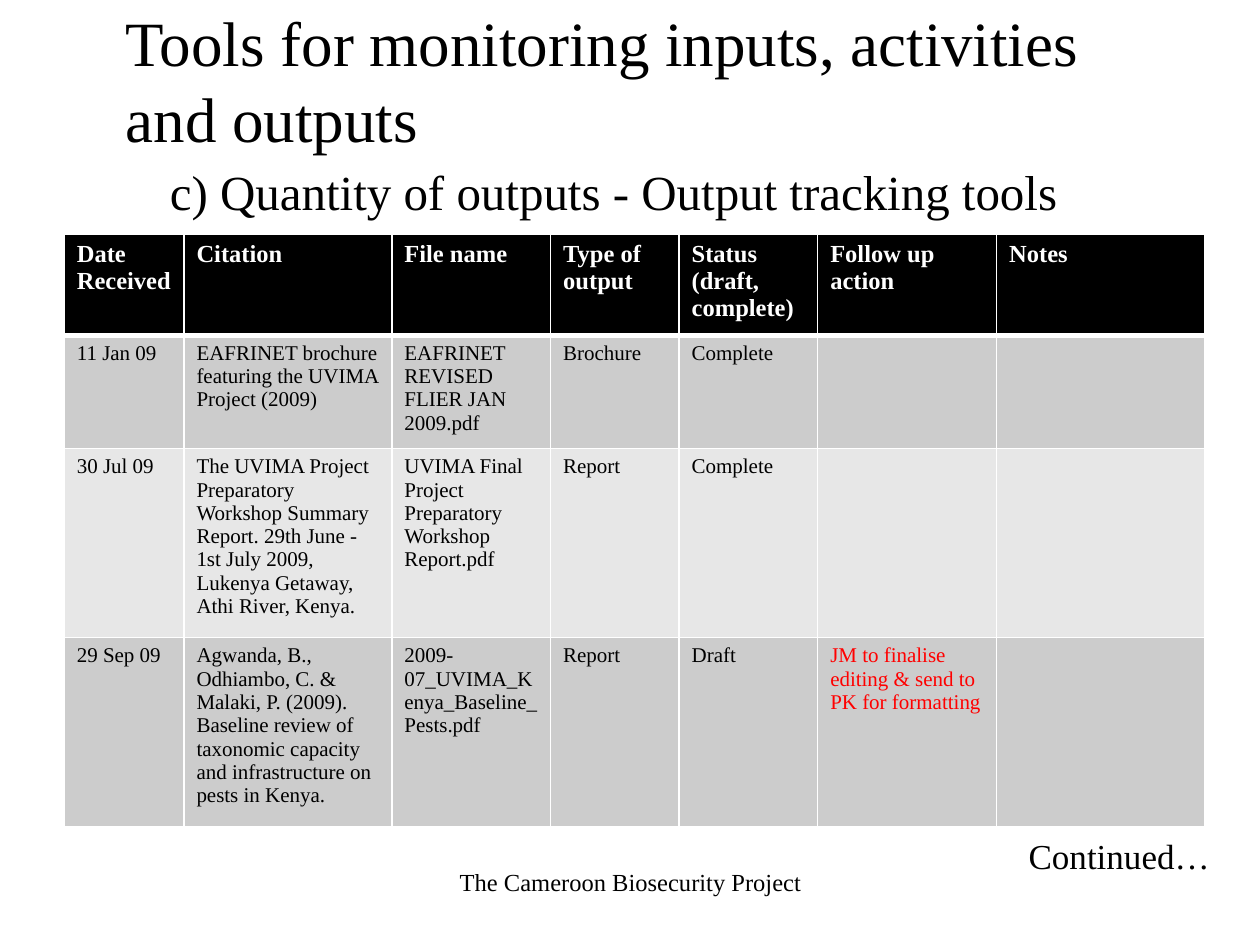
from pptx import Presentation
from pptx.dml.color import RGBColor
from pptx.enum.text import MSO_ANCHOR, PP_ALIGN
from pptx.oxml import parse_xml
from pptx.oxml.ns import nsdecls
from pptx.util import Inches, Pt

INK = {"black": "000000", "white": "FFFFFF", "red": "FF0000",
       "dark": "CCCCCC", "light": "E7E7E7"}
FONT = "Times New Roman"

# Content: text, box in inches, size, alignment, anchor, space before
TEXTS = [
    ("Tools for monitoring inputs, activities and outputs",
     (0.9, 0.76, 8.21, 0.52), 36, PP_ALIGN.LEFT, MSO_ANCHOR.BOTTOM),
    ("The Cameroon Biosecurity Project",
     (3.42, 6.83, 3.17, 0.52), 14, PP_ALIGN.CENTER, MSO_ANCHOR.TOP),
    ("c) Quantity of outputs - Output tracking tools",
     (1.25, 1.23, 7.42, 0.76), 28, PP_ALIGN.LEFT, MSO_ANCHOR.TOP),
    ("Continued…",
     (7.64, 6.57, 2.06, 0.49), 20, PP_ALIGN.RIGHT, MSO_ANCHOR.TOP),
]
ROWS = [
    ["Date Received", "Citation", "File name", "Type of output",
     "Status (draft, complete)", "Follow up action", "Notes"],
    ["11 Jan 09", "EAFRINET brochure featuring the UVIMA Project (2009)",
     "EAFRINET REVISED FLIER JAN 2009.pdf", "Brochure", "Complete", "", ""],
    ["30 Jul 09",
     "The UVIMA Project Preparatory Workshop Summary Report. "
     "29th June - 1st July 2009, Lukenya Getaway, Athi River, Kenya.",
     "UVIMA Final Project Preparatory Workshop Report.pdf",
     "Report", "Complete", "", ""],
    ["29 Sep 09",
     "Agwanda, B., Odhiambo, C. & Malaki, P. (2009). Baseline review of "
     "taxonomic capacity and infrastructure on pests in Kenya.",
     "2009-07_UVIMA_Kenya_Baseline_Pests.pdf", "Report", "Draft",
     "JM to finalise editing & send to PK for formatting", ""],
]
WIDTHS = [0.95, 1.65, 1.26, 1.02, 1.1, 1.42, 1.65]
HEIGHTS = [0.74, 0.84, 1.4, 1.39]
FOLLOW = 5  # column of follow-up actions, set in red


def style(font, size, ink, bold=False):
    form = {"name": FONT, "size": Pt(size), "bold": bold}
    for key, value in form.items():
        setattr(font, key, value)
    font.color.rgb = RGBColor.from_string(INK[ink])


def edge(cell, side, width):
    """Give one side of a cell a white line."""
    line = parse_xml(
        f'<a:ln{side} {nsdecls("a")} w="{Pt(width)}"><a:solidFill>'
        f'<a:srgbClr val="{INK["white"]}"/></a:solidFill></a:ln{side}>')
    cell._tc.get_or_add_tcPr().append(line)


deck = Presentation()
deck.slide_width, deck.slide_height = Inches(10), Inches(7.5)
slide = deck.slides.add_slide(deck.slide_layouts[6])

# Title, footer, subtitle and closing note
for text, place, size, align, anchor in TEXTS:
    frame = slide.shapes.add_textbox(*map(Inches, place)).text_frame
    frame.word_wrap = True
    frame.vertical_anchor = anchor
    para = frame.paragraphs[0]
    para.text = text
    para.alignment = align
    style(para.font, size, "black")

# Output tracking table
table = slide.shapes.add_table(
    len(ROWS), len(WIDTHS), Inches(0.51), Inches(1.86),
    Inches(sum(WIDTHS)), Inches(sum(HEIGHTS))).table
for col, width in zip(table.columns, WIDTHS):
    col.width = Inches(width)
for row, height in zip(table.rows, HEIGHTS):
    row.height = Inches(height)

for r, row in enumerate(ROWS):
    head = r == 0
    fill = "black" if head else "dark" if r % 2 else "light"
    for c, text in enumerate(row):
        cell = table.cell(r, c)
        para = cell.text_frame.paragraphs[0]
        para.text = text
        ink = "white" if head else "red" if c == FOLLOW else "black"
        style(para.font, 14 if head else 12, ink, head)
        for side in "LRTB":
            thick = (head and side == "B") or (r == 1 and side == "T")
            edge(cell, side, 3 if thick else 1)
        cell.fill.solid()
        cell.fill.fore_color.rgb = RGBColor.from_string(INK[fill])

deck.save("out.pptx")
